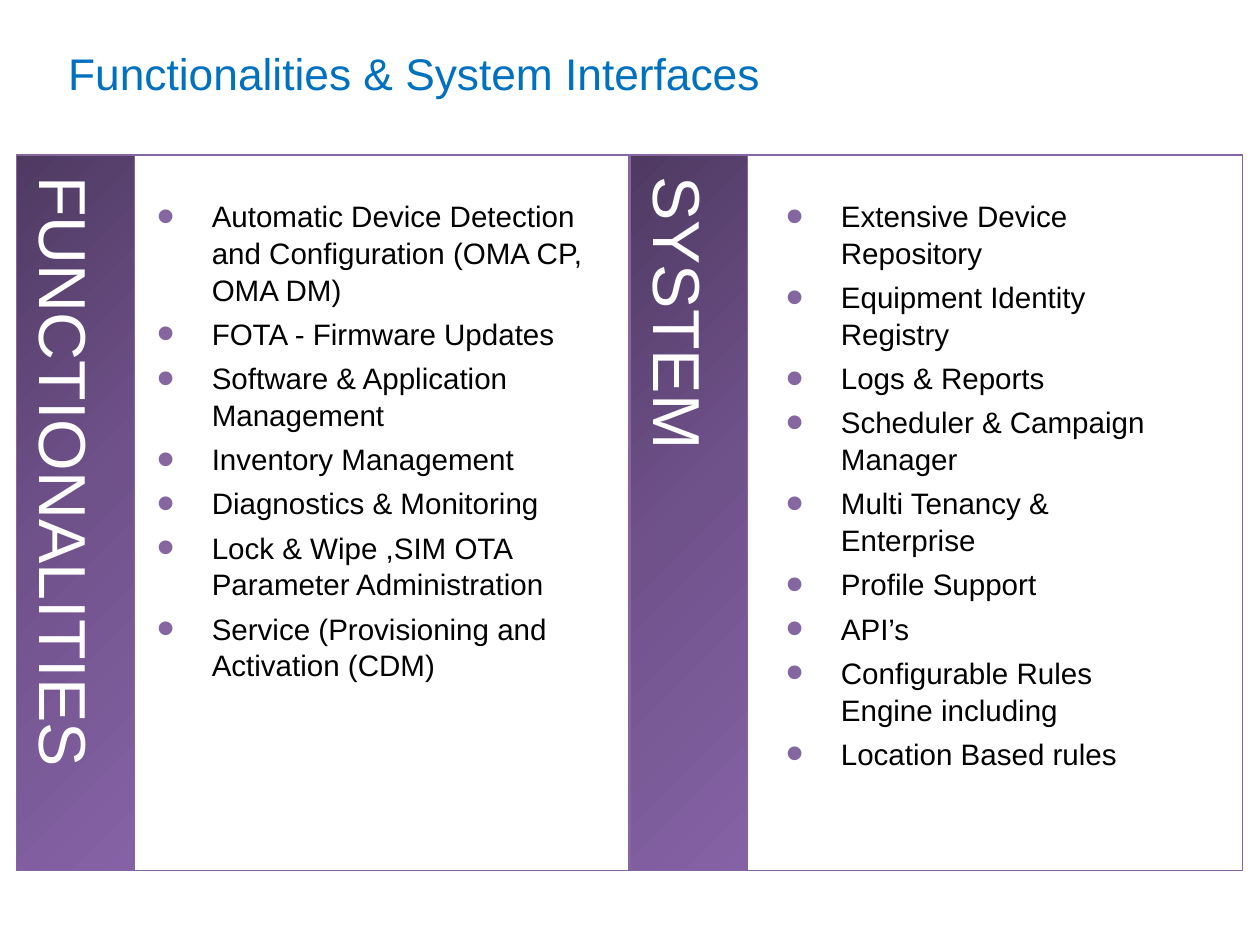
from lxml.etree import SubElement
from copy import deepcopy
from pptx import Presentation
from pptx.dml.color import RGBColor
from pptx.enum.shapes import MSO_SHAPE as Preset
from pptx.enum.text import MSO_ANCHOR as Anchor, MSO_AUTO_SIZE as AutoSize, PP_ALIGN as Align
from pptx.oxml.ns import qn
from pptx.util import Inches, Pt

SLIDE_W, SLIDE_H = 14.22, 10.67

# Grid: two equal sections, each a narrow band followed by a panel
MARGIN, SECTION_W = 0.19, 6.92
BAND_W, PANEL_W = 1.33, 5.58
ROW_TOP, ROW_H = 1.75, 8.08
LIST_TOP = 2.17

PURPLE = "8566A1"
BAND_STOPS = [(0, "4F3A62"), (0.5, "70528B"), (1, "8562A5")]

# Heading, heading length, list offset in the section, list size, list items
SECTIONS = [
    ("FUNCTIONALITIES", 7.5, 1.14, (5.36, 7.59), [
        "Automatic Device Detection and Configuration (OMA CP, OMA DM)",
        "FOTA - Firmware Updates",
        "Software & Application Management",
        "Inventory Management",
        "Diagnostics & Monitoring",
        "Lock & Wipe ,SIM OTA Parameter Administration",
        "Service (Provisioning and Activation (CDM)",
    ]),
    ("SYSTEM", 8.17, 1.32, (5.01, 7), [
        "Extensive Device Repository",
        "Equipment Identity Registry",
        "Logs & Reports",
        "Scheduler & Campaign Manager",
        "Multi Tenancy & Enterprise",
        "Profile Support",
        "API’s",
        "Configurable Rules Engine including",
        "Location Based rules",
    ]),
]


def colour(hex_text):
    return RGBColor.from_string(hex_text)


def apply(target, values):
    for name, value in values.items():
        setattr(target, name, value)


def place(shape, left, top, width, height):
    apply(shape, {"left": Inches(left), "top": Inches(top),
                  "width": Inches(width), "height": Inches(height)})


def set_frame(frame, side, edge, anchor=Anchor.TOP, wrap=True):
    apply(frame, {"word_wrap": wrap, "auto_size": AutoSize.NONE,
                  "vertical_anchor": anchor,
                  "margin_left": Inches(side), "margin_right": Inches(side),
                  "margin_top": Inches(edge), "margin_bottom": Inches(edge)})


def set_font(paragraph, size, hex_text):
    apply(paragraph.font, {"name": "Arial", "size": Pt(size), "bold": False})
    paragraph.font.color.rgb = colour(hex_text)


def add_box(slide, left, width):
    box = slide.shapes.add_shape(Preset.RECTANGLE, Inches(left), Inches(ROW_TOP),
                                 Inches(width), Inches(ROW_H))
    box.shadow.inherit = False
    box.fill.background()
    box.line.color.rgb = colour(PURPLE)
    box.line.width = Pt(1)
    return box


def add_band(slide, left):
    fill = add_box(slide, left, BAND_W).fill
    fill.gradient()
    fill.gradient_angle = 315
    stop_list = fill._xPr.find(qn("a:gradFill")).find(qn("a:gsLst"))
    stop_list.append(deepcopy(stop_list[0]))
    for stop, (position, hex_text) in zip(fill.gradient_stops, BAND_STOPS):
        stop.position = position
        stop.color.rgb = colour(hex_text)


def add_heading(slide, text, band_left, length):
    """Turn the heading a quarter so that it reads down its band."""
    thickness = 0.74
    centre_x = band_left + 0.78
    start_y = ROW_TOP + 0.17
    heading = slide.shapes.add_textbox(0, 0, 0, 0)
    place(heading, centre_x - length / 2, start_y + (length - thickness) / 2,
          length, thickness)
    heading.rotation = 90
    set_frame(heading.text_frame, 0.07, 0.14, wrap=False)
    paragraph = heading.text_frame.paragraphs[0]
    paragraph.text = text
    paragraph.alignment = Align.LEFT
    set_font(paragraph, 54, "FFFFFF")


def add_bullet(paragraph):
    properties = paragraph._p.get_or_add_pPr()
    properties.set("marL", str(Inches(0.97)))
    properties.set("indent", str(Inches(-0.62)))
    bullet_colour = SubElement(properties, qn("a:buClr"))
    SubElement(bullet_colour, qn("a:srgbClr"), val=PURPLE)
    SubElement(properties, qn("a:buSzPct"), val="171000")
    SubElement(properties, qn("a:buFont"), typeface="Arial")
    SubElement(properties, qn("a:buChar"), char="•")


def add_list(slide, items, left, size):
    box = slide.shapes.add_textbox(0, 0, 0, 0)
    place(box, left, LIST_TOP, *size)
    frame = box.text_frame
    set_frame(frame, 0.09, 0.05)
    for index, item in enumerate(items):
        paragraph = frame.add_paragraph() if index else frame.paragraphs[0]
        paragraph.text = item
        add_bullet(paragraph)
        apply(paragraph, {"line_spacing": 1.04,
                          "space_before": Pt(6 if index else 0)})
        set_font(paragraph, 24, "000000")


def set_title(slide, text):
    title = slide.shapes.title
    place(title, 0.71, 0.43, 8.98, 0.74)
    set_frame(title.text_frame, 0.06, 0.05, Anchor.BOTTOM)
    paragraph = title.text_frame.paragraphs[0]
    paragraph.text = text
    paragraph.alignment = Align.LEFT
    set_font(paragraph, 36, "0070C0")


def main():
    deck = Presentation()
    apply(deck, {"slide_width": Inches(SLIDE_W), "slide_height": Inches(SLIDE_H)})
    slide = deck.slides.add_slide(deck.slide_layouts[5])
    set_title(slide, "Functionalities & System Interfaces")

    # Sections from left to right
    for column, (heading, length, offset, size, items) in enumerate(SECTIONS):
        left = MARGIN + column * SECTION_W
        add_box(slide, left + BAND_W, PANEL_W)
        add_band(slide, left)
        add_list(slide, items, left + offset, size)
        add_heading(slide, heading, left, length)

    deck.save("out.pptx")


if __name__ == "__main__":
    main()
